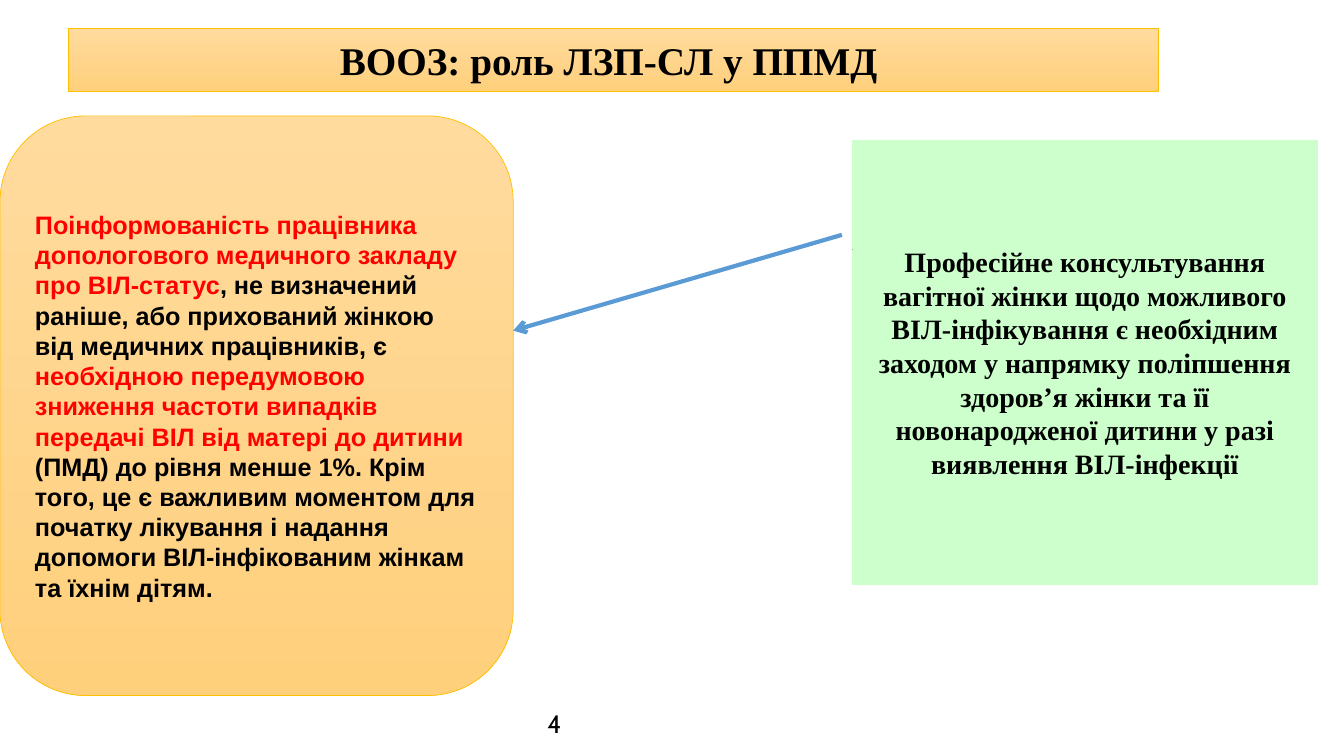
"""Builds a slide on HIV awareness and counselling in antenatal care."""
import pptx
import pptx.dml.color
import pptx.enum.shapes
import pptx.enum.text
import pptx.oxml.ns
import pptx.util
from lxml import etree

Inches = pptx.util.Inches
Pt = pptx.util.Pt
SHAPE = pptx.enum.shapes.MSO_SHAPE
ALIGN = pptx.enum.text.PP_ALIGN

COLOURS = {
    "black": "000000", "red": "FF0000", "gold": "FFC000",
    "light_orange": "FFDB9E", "orange": "FFD07C",
    "green": "CCFFCC", "grey": "A5A5A5", "blue": "5B9BD5",
}
TITLE = [("ВООЗ: роль ЛЗП-СЛ у ППМД ", "black")]
AWARENESS = [
    ("Поінформованість працівника допологового медичного закладу про ВІЛ-статус", "red"),
    (", не визначений раніше, або прихований жінкою від медичних працівників, є ", "black"),
    ("необхідною передумовою зниження частоти випадків передачі ВІЛ від матері до дитини ", "red"),
    ("(ПМД) до рівня менше 1%. Крім того, це є важливим моментом для початку лікування "
     "і надання допомоги ВІЛ-інфікованим жінкам та їхнім дітям.", "black"),
]
COUNSELLING = [
    ("Професійне консультування вагітної жінки щодо можливого ВІЛ-інфікування є необхідним "
     "заходом у напрямку поліпшення здоров’я жінки та її новонародженої дитини "
     "у разі виявлення ВІЛ-інфекції", "black"),
]
PAGE_NUMBER = [("4", "black")]

TITLE_PLACE = (0.68, 0.28, 10.81, 0.63)
AWARENESS_PLACE = (0, 1.15, 5.09, 5.75)
COUNSELLING_PLACE = (8.45, 1.39, 4.62, 4.41)
NUMBER_PLACE = (5.33, 6.98, 3.11, 0.23)
ARROW_ENDS = (8.35, 2.33, 5.09, 3.28)
CALLOUT_ADJUSTMENTS = (0.246, 0.001, 0.246, -0.001)


def inches(values):
    return [Inches(value) for value in values]


def colour(name):
    return pptx.dml.color.RGBColor.from_string(COLOURS[name])


def write(box, spans, font, size, bold=True, align=ALIGN.LEFT,
          anchor=pptx.enum.text.MSO_ANCHOR.MIDDLE):
    frame = box.text_frame
    frame.word_wrap = True
    frame.auto_size = pptx.enum.text.MSO_AUTO_SIZE.NONE
    frame.vertical_anchor = anchor
    para = frame.paragraphs[0]
    para.alignment = align
    para.line_spacing = 1.0
    para.space_before = Pt(0)
    para.font.name = font
    para.font.size = Pt(size)
    para.font.bold = bold
    for text, name in spans:
        span = para.add_run()
        span.text = text
        span.font.color.rgb = colour(name)


def outline(box, name):
    box.line.color.rgb = colour(name)
    box.line.width = Pt(0.5)


def paint_orange(box):
    box.fill.gradient()
    box.fill.gradient_angle = 270
    for stop, name in zip(box.fill.gradient_stops, ("light_orange", "orange")):
        stop.color.rgb = colour(name)
    outline(box, "gold")


def add_box(page, kind, place):
    box = page.shapes.add_shape(kind, *inches(place))
    box.shadow.inherit = False
    return box


def add_arrow(page):
    arrow = page.shapes.add_connector(
        pptx.enum.shapes.MSO_CONNECTOR.STRAIGHT, *inches(ARROW_ENDS))
    arrow.line.color.rgb = colour("blue")
    arrow.line.width = Pt(3)
    qn = pptx.oxml.ns.qn
    line = arrow.line._get_or_add_ln()
    etree.SubElement(line, qn("a:tailEnd")).set("type", "arrow")
    etree.SubElement(arrow._element.spPr, qn("a:effectLst"))


def main():
    deck = pptx.Presentation()
    deck.slide_width, deck.slide_height = Inches(13.33), Inches(7.5)
    page = deck.slides.add_slide(deck.slide_layouts[5])

    title = page.shapes.title
    title.left, title.top, title.width, title.height = inches(TITLE_PLACE)
    paint_orange(title)
    write(title, TITLE, "Times New Roman", 28, align=ALIGN.CENTER)

    number = page.shapes.add_textbox(*inches(NUMBER_PLACE))
    write(number, PAGE_NUMBER, "Cabin", 18, bold=False,
          anchor=pptx.enum.text.MSO_ANCHOR.TOP)

    awareness = add_box(page, SHAPE.ROUNDED_RECTANGLE, AWARENESS_PLACE)
    paint_orange(awareness)
    write(awareness, AWARENESS, "Arial", 18)

    counselling = add_box(page, SHAPE.LINE_CALLOUT_1_NO_BORDER, COUNSELLING_PLACE)
    for index, value in enumerate(CALLOUT_ADJUSTMENTS):
        counselling.adjustments[index] = value
    counselling.fill.solid()
    counselling.fill.fore_color.rgb = colour("green")
    outline(counselling, "grey")
    write(counselling, COUNSELLING, "Times New Roman", 20, align=ALIGN.CENTER)

    add_arrow(page)
    deck.save("out.pptx")


if __name__ == "__main__":
    main()
